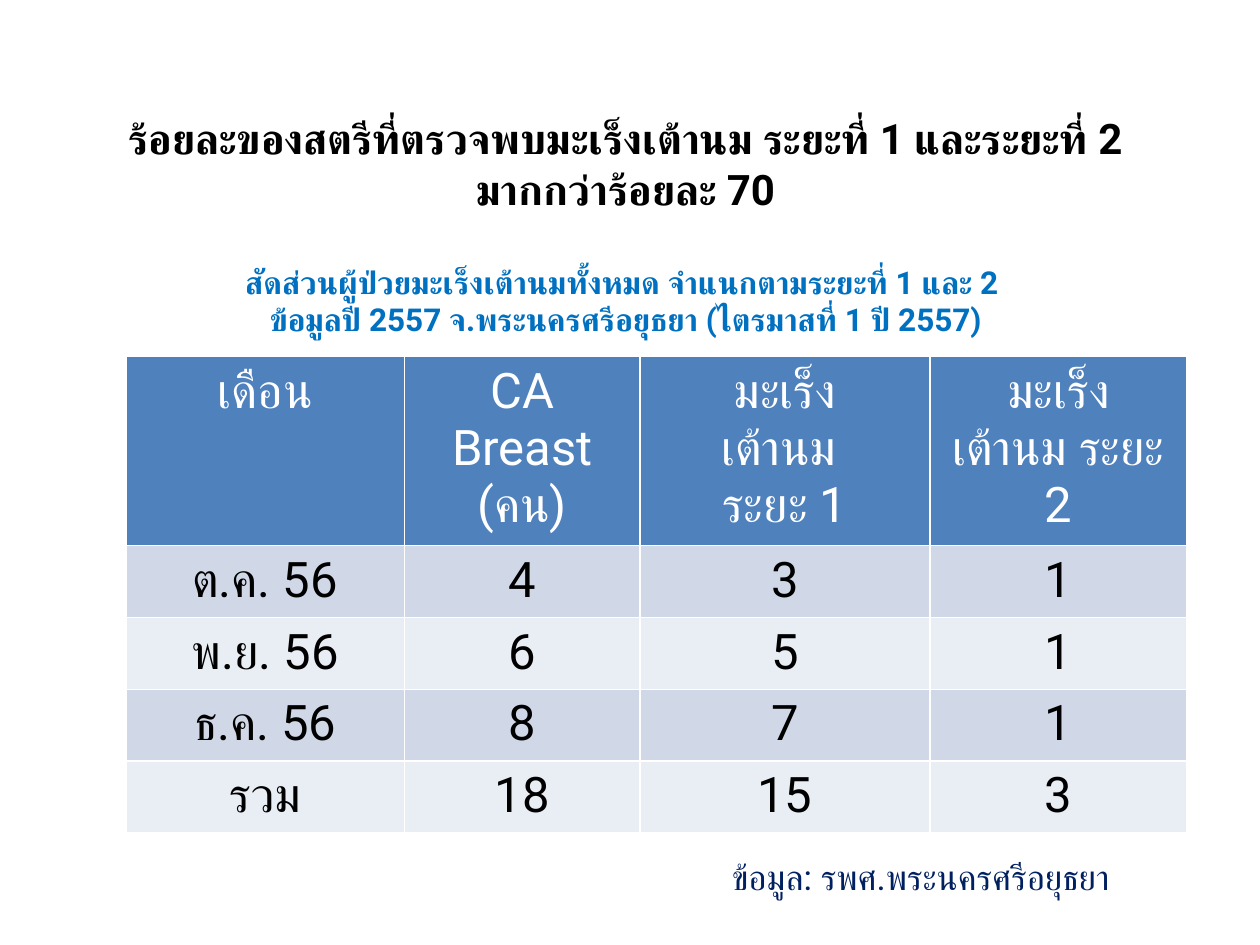
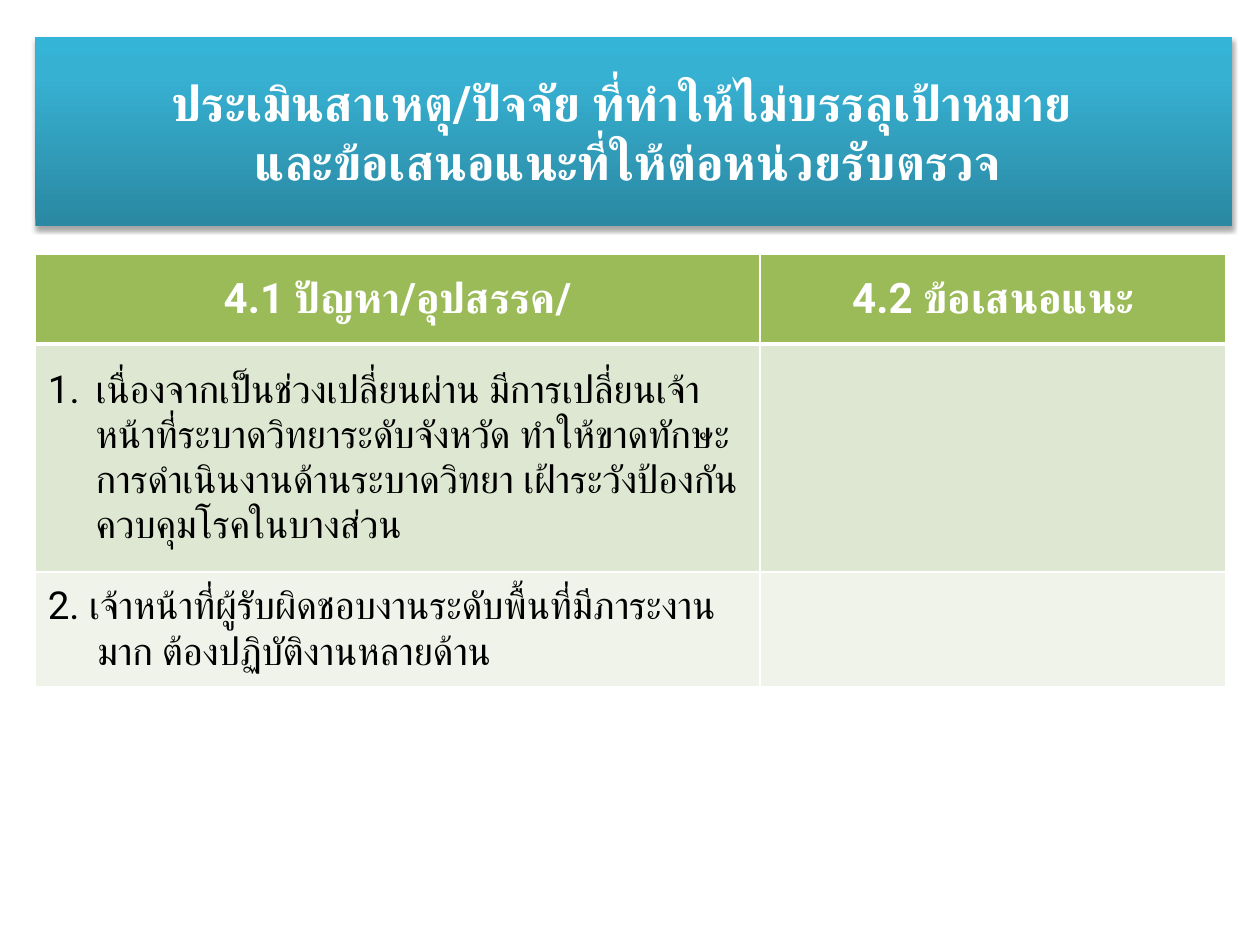
from dataclasses import dataclass

import lxml.etree
import pptx
import pptx.dml.color
import pptx.enum.text
import pptx.oxml
import pptx.oxml.ns
import pptx.util

Inches = pptx.util.Inches
Pt = pptx.util.Pt
Align = pptx.enum.text.PP_ALIGN
Anchor = pptx.enum.text.MSO_ANCHOR
qn = pptx.oxml.ns.qn


@dataclass(frozen=True)
class Theme:
    font: str = "Roboto"
    black: str = "000000"
    white: str = "FFFFFF"
    subtitle: str = "0070C0"
    source: str = "002060"
    blue_table: tuple = ("4F81BD", "D0D8E8", "E9EDF4")
    green_table: tuple = ("9BBB59", "DEE7D1", "EFF3EA")
    banner: tuple = ((0, "2A88A2"), (80, "37B1D2"), (100, "34B4D6"))
    size_large: int = 28
    size_heading: int = 24
    size_body: int = 22
    size_source: int = 20
    size_subtitle: int = 18


THEME = Theme()

MONTHLY_CASES = [
    ["เดือน", "CA Breast (คน)", "มะเร็ง\nเต้านม \nระยะ 1", "มะเร็ง\nเต้านม ระยะ 2"],
    ["ต.ค. 56", "4", "3", "1"],
    ["พ.ย. 56", "6", "5", "1"],
    ["ธ.ค. 56", "8", "7", "1"],
    ["รวม", "18", "15", "3"],
]

PROBLEMS = [
    ["4.1 ปัญหา/อุปสรรค/", "4.2 ข้อเสนอแนะ"],
    ["เนื่องจากเป็นช่วงเปลี่ยนผ่าน มีการเปลี่ยนเจ้าหน้าที่ระบาดวิทยาระดับจังหวัด "
     "ทำให้ขาดทักษะการดำเนินงานด้านระบาดวิทยา เฝ้าระวังป้องกันควบคุมโรคในบางส่วน", ""],
    ["2. เจ้าหน้าที่ผู้รับผิดชอบงานระดับพื้นที่มีภาระงานมาก ต้องปฏิบัติงานหลายด้าน", ""],
]


def style_paragraph(para, size, color, bold=False, align=Align.LEFT):
    para.alignment = align
    font = para.font
    font.name, font.size, font.bold = THEME.font, Pt(size), bold
    font.color.rgb = pptx.dml.color.RGBColor.from_string(color)
    for span in para.runs:
        properties = span._r.get_or_add_rPr()
        lxml.etree.SubElement(properties, qn("a:cs"), typeface=THEME.font)


def place(shape, box):
    shape.left, shape.top, shape.width, shape.height = map(Inches, box)


def add_title(page, box, text):
    title = page.shapes.title
    place(title, box)
    frame = title.text_frame
    frame.text = text
    frame.word_wrap = True
    frame.auto_size = pptx.enum.text.MSO_AUTO_SIZE.NONE
    frame.vertical_anchor = Anchor.MIDDLE
    return title


def add_banner_style(shape):
    stops = "".join(
        f'<a:gs pos="{position * 1000}"><a:srgbClr val="{color}"/></a:gs>'
        for position, color in THEME.banner)
    gradient = (f'<a:gradFill {pptx.oxml.ns.nsdecls("a")} rotWithShape="1">'
                f'<a:gsLst>{stops}</a:gsLst><a:lin ang="16200000" scaled="0"/></a:gradFill>')
    shadow = (f'<a:effectLst {pptx.oxml.ns.nsdecls("a")}>'
              f'<a:outerShdw blurRad="{Pt(3.1)}" dist="{Pt(1.8)}" dir="5400000" rotWithShape="0">'
              f'<a:srgbClr val="{THEME.black}"><a:alpha val="35000"/></a:srgbClr>'
              '</a:outerShdw></a:effectLst>')
    properties = shape._element.spPr
    lxml.etree.SubElement(properties, qn("a:prstGeom"), prst="rect")
    for markup in (gradient, shadow):
        properties.append(pptx.oxml.parse_xml(markup))


def set_borders(cell, top, bottom):
    properties = cell._tc.get_or_add_tcPr()
    widths = {"lnL": 1, "lnR": 1, "lnT": top, "lnB": bottom}
    for index, (side, width) in enumerate(widths.items()):
        line = pptx.oxml.parse_xml(
            f'<a:{side} {pptx.oxml.ns.nsdecls("a")} w="{Pt(width)}"><a:solidFill>'
            f'<a:srgbClr val="{THEME.white}"/></a:solidFill></a:{side}>')
        properties.insert(index, line)


def add_banded_table(page, box, rows, widths, heights, colors, sizes,
                     bold_header=False, body_align=Align.CENTER,
                     anchor=Anchor.TOP, header_rule=1):
    frame = page.shapes.add_table(len(rows), len(widths), *map(Inches, box))
    table = frame.table
    for column, width in zip(table.columns, widths):
        column.width = Inches(width)
    for row, height in zip(table.rows, heights):
        row.height = Inches(height)
    header_color, *bands = colors
    for row_index, values in enumerate(rows):
        is_header = row_index == 0
        fill = header_color if is_header else bands[(row_index - 1) % 2]
        for column_index, value in enumerate(values):
            cell = table.cell(row_index, column_index)
            cell.text = value
            cell.vertical_anchor = anchor
            cell.fill.solid()
            cell.fill.fore_color.rgb = pptx.dml.color.RGBColor.from_string(fill)
            set_borders(cell, header_rule if row_index == 1 else 1,
                        header_rule if is_header else 1)
            for para in cell.text_frame.paragraphs:
                style_paragraph(para, sizes[0] if is_header else sizes[1],
                                THEME.white if is_header else THEME.black,
                                bold_header and is_header,
                                Align.CENTER if is_header else body_align)
    return table


def set_hanging(cell, indent, numbered=False):
    properties = cell.text_frame.paragraphs[0]._p.get_or_add_pPr()
    properties.set("marL", str(Inches(indent)))
    properties.set("indent", str(-Inches(indent)))
    if numbered:
        number = pptx.oxml.parse_xml(
            f'<a:buAutoNum {pptx.oxml.ns.nsdecls("a")} type="arabicPeriod"/>')
        properties.insert(0, number)


def add_source(page, box, text):
    note = page.shapes.add_textbox(*map(Inches, box))
    note.text_frame.word_wrap = True
    note.text_frame.text = text
    style_paragraph(note.text_frame.paragraphs[0], THEME.size_source, THEME.source)


def build_cases_page(page):
    title = add_title(
        page, (0.43, 0.83, 9.07, 1.92),
        "ร้อยละของสตรีที่ตรวจพบมะเร็งเต้านม ระยะที่ 1 และระยะที่ 2 มากกว่าร้อยละ 70\n"
        "สัดส่วนผู้ป่วยมะเร็งเต้านมทั้งหมด จำแนกตามระยะที่ 1 และ 2 \v"
        "ข้อมูลปี 2557 จ.พระนครศรีอยุธยา (ไตรมาสที่ 1 ปี 2557)")
    heading, subtitle = title.text_frame.paragraphs
    style_paragraph(heading, THEME.size_heading, THEME.black, True, Align.CENTER)
    style_paragraph(subtitle, THEME.size_subtitle, THEME.subtitle, True, Align.CENTER)
    subtitle.space_before = Pt(28)
    add_source(page, (5.71, 6.74, 5, 0.44), "ข้อมูล: รพศ.พระนครศรีอยุธยา")
    add_banded_table(page, (1, 2.83, 8.42, 3.77), MONTHLY_CASES,
                     widths=(2.21, 1.87, 2.3, 2.04), heights=[1.49] + [0.57] * 4,
                     colors=THEME.blue_table, sizes=(THEME.size_large, THEME.size_large))


def build_problems_page(page):
    banner = add_title(page, (0.28, 0.29, 9.5, 1.5),
                       "ประเมินสาเหตุ/ปัจจัย ที่ทำให้ไม่บรรลุเป้าหมาย  \n"
                       "และข้อเสนอแนะที่ให้ต่อหน่วยรับตรวจ ")
    add_banner_style(banner)
    for para in banner.text_frame.paragraphs:
        style_paragraph(para, THEME.size_large, THEME.white, True, Align.CENTER)
    table = add_banded_table(page, (0.28, 2.02, 9.45, 3.43), PROBLEMS,
                             widths=(5.75, 3.7), heights=(0.71, 1.81, 0.91),
                             colors=THEME.green_table,
                             sizes=(THEME.size_heading, THEME.size_body),
                             bold_header=True, body_align=Align.LEFT,
                             anchor=Anchor.MIDDLE, header_rule=3)
    set_hanging(table.cell(1, 0), 0.38, numbered=True)
    set_hanging(table.cell(2, 0), 0.39)


def main():
    deck = pptx.Presentation()
    deck.slide_width, deck.slide_height = Inches(10), Inches(7.5)
    title_only = deck.slide_layouts[5]
    for build_page in (build_cases_page, build_problems_page):
        build_page(deck.slides.add_slide(title_only))
    deck.save("out.pptx")


if __name__ == "__main__":
    main()
